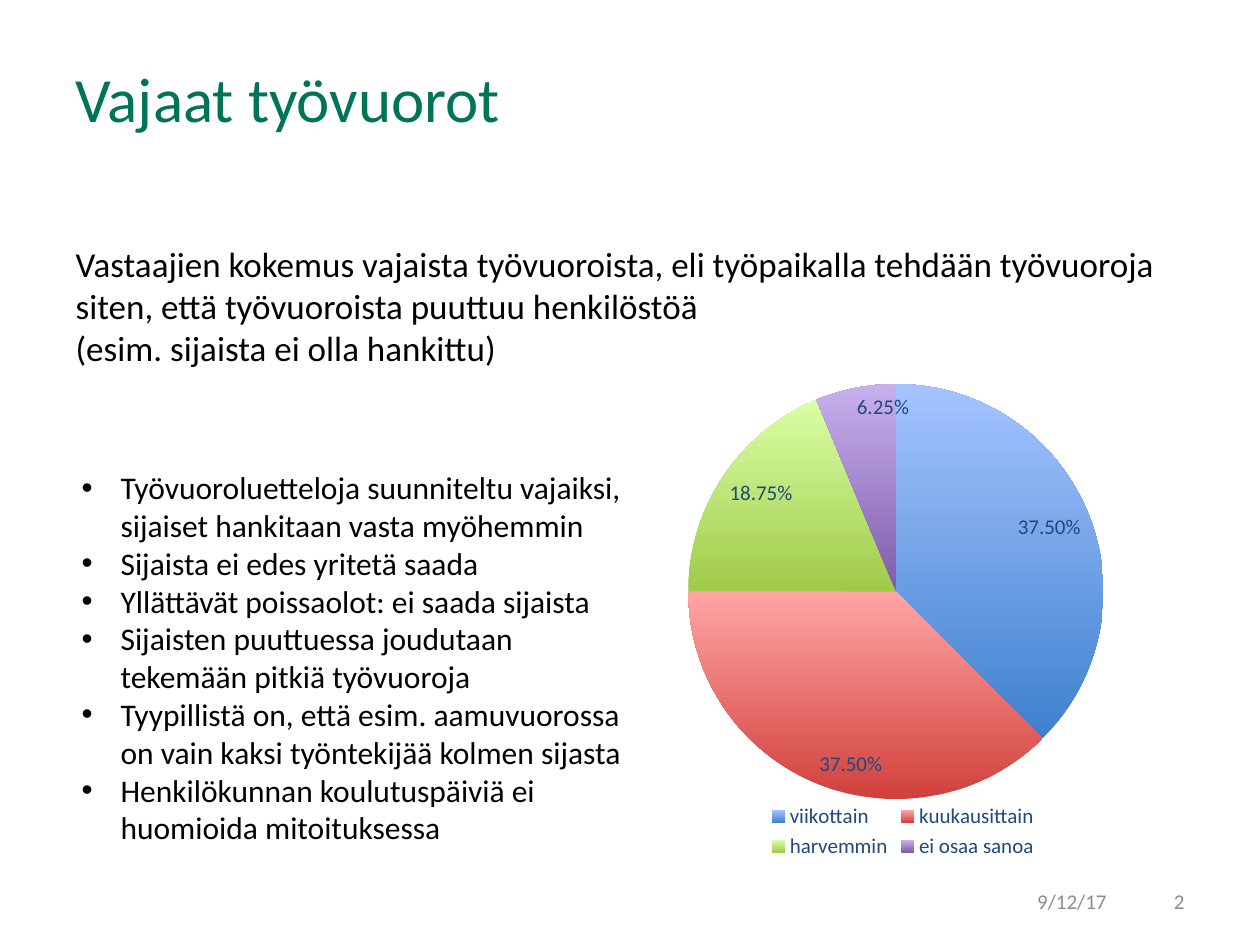
import pptx
import pptx.chart.data
import pptx.dml.color
import pptx.enum.chart
import pptx.enum.text
import pptx.oxml
import pptx.oxml.ns
import pptx.util
from lxml import etree

PX = 914400 / 126  # EMU per pixel
FONT = "Calibri"
ALIGN = pptx.enum.text.PP_ALIGN
ANCHOR = pptx.enum.text.MSO_ANCHOR


def style(font, size, color):
    font.name = FONT
    font.size = pptx.util.Pt(size)
    font.color.rgb = pptx.dml.color.RGBColor.from_string(color)


def place(shape, *box):
    shape.left, shape.top, shape.width, shape.height = [round(v * PX) for v in box]


presentation = pptx.Presentation()
presentation.slide_width = round(1260 * PX)
presentation.slide_height = round(945 * PX)
slide = presentation.slides.add_slide(presentation.slide_layouts[3])
title, intro, reasons = slide.placeholders

# Title
place(title, 63, 38, 775, 118)
title.text_frame.text = "Vajaat työvuorot"
title.text_frame.vertical_anchor = ANCHOR.MIDDLE
title.text_frame.auto_size = pptx.enum.text.MSO_AUTO_SIZE.NONE
paragraph = title.text_frame.paragraphs[0]
paragraph.alignment = ALIGN.LEFT
style(paragraph.font, 36, "007459")

# Introduction and bulleted reasons
intro_lines = [
    "Vastaajien kokemus vajaista työvuoroista, eli työpaikalla tehdään työvuoroja "
    "siten, että työvuoroista puuttuu henkilöstöä\v(esim. sijaista ei olla hankittu)",
]
reason_lines = [
    "Työvuoroluetteloja suunniteltu vajaiksi, sijaiset hankitaan vasta myöhemmin",
    "Sijaista ei edes yritetä saada",
    "Yllättävät poissaolot: ei saada sijaista",
    "Sijaisten puuttuessa joudutaan tekemään pitkiä työvuoroja",
    "Tyypillistä on, että esim. aamuvuorossa on vain kaksi työntekijää kolmen sijasta",
    "Henkilökunnan koulutuspäiviä ei huomioida mitoituksessa",
]
for shape, box, lines, size, indent, bullet in [
    (intro, (63, 236, 1134, 164), intro_lines, 20, 0, None),
    (reasons, (69, 462, 572, 432), reason_lines, 18, 39, "•"),
]:
    place(shape, *box)
    shape.text_frame.text = "\n".join(lines)
    shape.text_frame.auto_size = pptx.enum.text.MSO_AUTO_SIZE.NONE
    for paragraph in shape.text_frame.paragraphs:
        properties = paragraph._p.get_or_add_pPr()
        properties.set("marL", str(round(indent * PX)))
        properties.set("indent", str(round(-indent * PX)))
        tag = "a:buChar" if bullet else "a:buNone"
        mark = etree.SubElement(properties, pptx.oxml.ns.qn(tag))
        if bullet:
            mark.set("char", bullet)
        paragraph.space_before = pptx.util.Pt(0)
        style(paragraph.font, size, "000000")

# Pie chart
chart_data = pptx.chart.data.CategoryChartData(number_format="0.00%")
chart_data.categories = ["viikottain", "kuukausittain", "harvemmin", "ei osaa sanoa"]
chart_data.add_series("Series 1", [0.375, 0.375, 0.1875, 0.0625])
frame = slide.shapes.add_chart(
    pptx.enum.chart.XL_CHART_TYPE.PIE,
    *[round(v * PX) for v in (609, 384, 588, 480)], chart_data)
chart = frame.chart
style(chart.font, 10, "000000")
chart.has_title = False
chart.has_legend = True
chart.legend.position = pptx.enum.chart.XL_LEGEND_POSITION.BOTTOM
chart.legend.include_in_layout = False
style(chart.legend.font, 12, "1F497D")

plot = chart.plots[0]
plot.vary_by_categories = True
gradients = [("3F80CE", "A4C4FF"), ("D1403C", "FFA6A5"),
             ("A0CA4A", "DAFFA5"), ("7F5BAB", "C8B0ED")]
for index, colors in enumerate(gradients):
    fill = plot.series[0].points[index].format.fill
    fill.gradient()
    fill.gradient_angle = 90
    for stop, color in zip(fill.gradient_stops, colors):
        stop.color.rgb = pptx.dml.color.RGBColor.from_string(color)

plot.has_data_labels = True
labels = plot.data_labels
labels.show_value = True
labels.show_percentage = False
labels.number_format = "0.00%"
labels.number_format_is_linked = False
labels.position = pptx.enum.chart.XL_LABEL_POSITION.INSIDE_END
style(labels.font, 12, "1F497D")

# Fixed plot area within the chart
plot_area = chart._chartSpace.chart.plotArea
for old_layout in plot_area.findall(pptx.oxml.ns.qn("c:layout")):
    plot_area.remove(old_layout)
plot_area.insert(0, pptx.oxml.parse_xml(
    f'<c:layout {pptx.oxml.ns.nsdecls("c")}><c:manualLayout>'
    '<c:layoutTarget val="inner"/><c:xMode val="edge"/><c:yMode val="edge"/>'
    '<c:x val="0.135"/><c:y val="0"/><c:w val="0.706"/><c:h val="0.865"/>'
    '</c:manualLayout></c:layout>'))

# Date and slide number
for text, left, width in [("9/12/17", 825, 294), ("2", 1120, 77)]:
    footer = slide.shapes.add_textbox(0, 0, 0, 0)
    place(footer, left, 876, width, 50)
    footer.text_frame.word_wrap = True
    footer.text_frame.vertical_anchor = ANCHOR.MIDDLE
    paragraph = footer.text_frame.paragraphs[0]
    paragraph.text = text
    paragraph.alignment = ALIGN.RIGHT
    style(paragraph.font, 12, "8C8C8C")

presentation.save("out.pptx")
